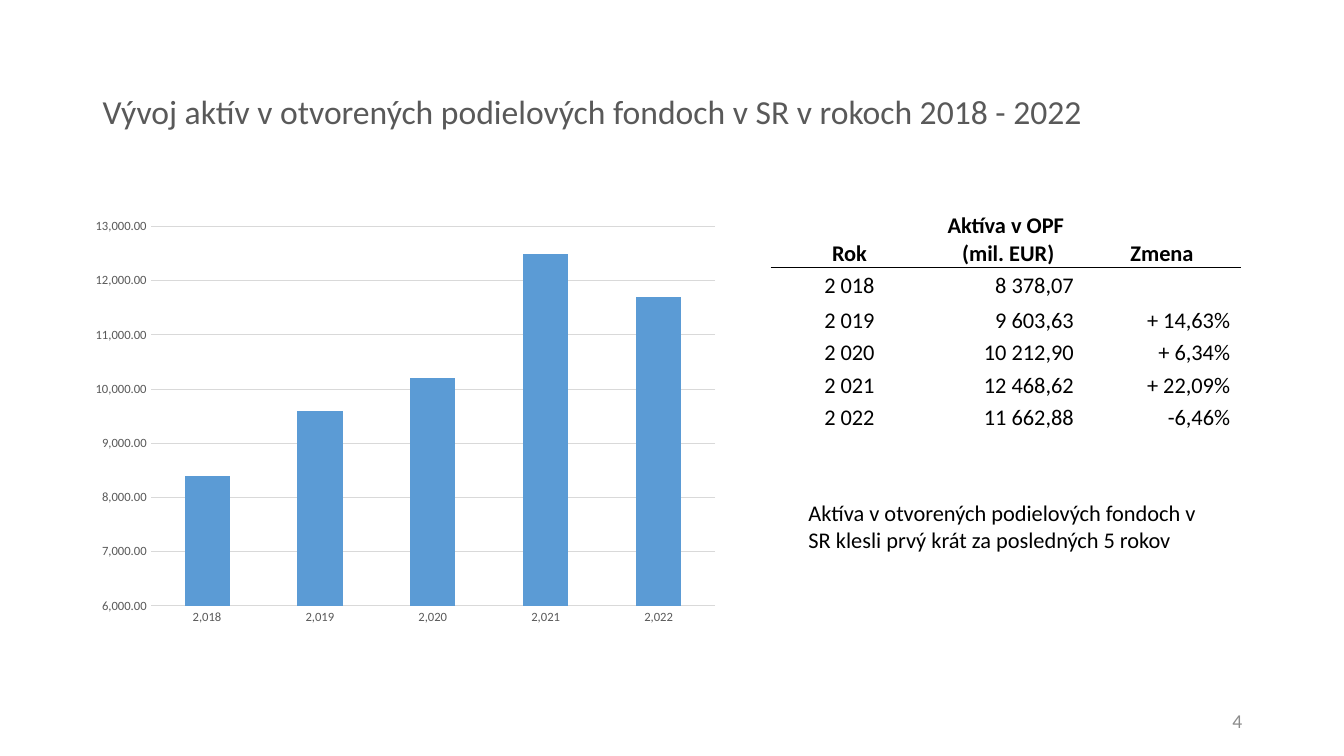
from lxml import etree
from pptx import Presentation
from pptx.chart.data import CategoryChartData
from pptx.dml.color import RGBColor
from pptx.enum.chart import XL_CHART_TYPE, XL_TICK_MARK
from pptx.enum.text import MSO_ANCHOR, PP_ALIGN
from pptx.oxml import parse_xml
from pptx.oxml.ns import nsdecls
from pptx.util import Inches, Pt

# Content
TITLE = "Vývoj aktív v otvorených podielových fondoch v SR v rokoch 2018 - 2022"
NOTE = "Aktíva v otvorených podielových fondoch v SR klesli prvý krát za posledných 5 rokov"
PAGE_NUMBER = "4"
YEARS = [2018, 2019, 2020, 2021, 2022]
ASSETS = [8400, 9600, 10200, 12500, 11700]
TABLE_ROWS = [
    ("Rok", "Aktíva v OPF\n (mil. EUR)", "Zmena"),
    ("2 018", "8 378,07", ""),
    ("2 019", "9 603,63", "+ 14,63%"),
    ("2 020", "10 212,90", "+ 6,34%"),
    ("2 021", "12 468,62", "+ 22,09%"),
    ("2 022", "11 662,88", "-6,46%"),
]
ROW_HEIGHTS = [0.64, 0.32, 0.35, 0.32, 0.32, 0.32]
COLUMN_WIDTH = 1.55

# Style
FONT = "Calibri"
BLACK = RGBColor(0x00, 0x00, 0x00)
DARK_GREY = RGBColor(0x59, 0x59, 0x59)
PAGE_GREY = RGBColor(0x8C, 0x8C, 0x8C)
GRID_GREY = RGBColor(0xD9, 0xD9, 0xD9)
BAR_BLUE = RGBColor(0x5B, 0x9B, 0xD5)
LEFT, CENTER, RIGHT = PP_ALIGN.LEFT, PP_ALIGN.CENTER, PP_ALIGN.RIGHT
TOP, MIDDLE, BOTTOM = MSO_ANCHOR.TOP, MSO_ANCHOR.MIDDLE, MSO_ANCHOR.BOTTOM
COLUMNS = XL_CHART_TYPE.COLUMN_CLUSTERED
NO_TICKS = XL_TICK_MARK.NONE


def set_font(font, size, color, bold=False):
    font.name = FONT
    font.size = Pt(size)
    font.bold = bold
    font.color.rgb = color


def write(frame, text, size, color, align=LEFT, bold=False):
    for index, line in enumerate(text.split("\n")):
        para = frame.add_paragraph() if index else frame.paragraphs[0]
        para.alignment = align
        if line:
            span = para.add_run()
            span.text = line
            set_font(span.font, size, color, bold)
        else:
            set_font(para.font, size, color, bold)


def add_text(page, place, text, size, color, align=LEFT, anchor=TOP):
    box = page.shapes.add_textbox(*map(Inches, place))
    frame = box.text_frame
    frame.word_wrap = True
    frame.vertical_anchor = anchor
    write(frame, text, size, color, align)
    return frame


def add_border(cell, side):
    line = parse_xml(f'<a:{side} {nsdecls("a")} w="{Pt(0.5)}"/>')
    fill = etree.SubElement(line, line.tag.replace(side, "solidFill"))
    etree.SubElement(fill, line.tag.replace(side, "srgbClr"), val=str(BLACK))
    cell._tc.get_or_add_tcPr().insert(0, line)


def add_asset_chart(page):
    data = CategoryChartData(number_format="#,##0.00")
    data.categories = YEARS
    data.categories.number_format = "#,##0"
    data.add_series("Series 1", ASSETS)
    place = map(Inches, (0.82, 2.09, 6.4, 4.19))
    chart = page.shapes.add_chart(COLUMNS, *place, data).chart
    chart.has_legend = False
    chart.has_title = False
    set_font(chart.font, 10, BLACK)

    plot = chart.plots[0]
    plot.gap_width = 150
    plot.vary_by_categories = False
    bars = plot.series[0].format.fill
    bars.solid()
    bars.fore_color.rgb = BAR_BLUE

    formats = ((chart.category_axis, "#,##0"), (chart.value_axis, "#,##0.00"))
    for axis, number_format in formats:
        axis.major_tick_mark = axis.minor_tick_mark = NO_TICKS
        axis.format.line.fill.background()
        axis.tick_labels.number_format = number_format
        axis.tick_labels.number_format_is_linked = False
        set_font(axis.tick_labels.font, 9, DARK_GREY)
    chart.value_axis.minimum_scale = 6000
    chart.value_axis.maximum_scale = 13000
    chart.value_axis.major_unit = 1000
    grid = chart.value_axis.major_gridlines.format.line
    grid.color.rgb = GRID_GREY
    grid.width = Pt(0.75)


def add_asset_table(page):
    column_count = len(TABLE_ROWS[0])
    place = map(Inches, (7.65, 2.01, COLUMN_WIDTH * column_count, sum(ROW_HEIGHTS)))
    table = page.shapes.add_table(len(TABLE_ROWS), column_count, *place).table
    table.first_row = table.horz_banding = False
    for column in table.columns:
        column.width = Inches(COLUMN_WIDTH)
    for row_index, texts in enumerate(TABLE_ROWS):
        table.rows[row_index].height = Inches(ROW_HEIGHTS[row_index])
        header = row_index == 0
        for column_index, text in enumerate(texts):
            cell = table.cell(row_index, column_index)
            numeric = not header and column_index > 0
            cell.margin_left = cell.margin_top = cell.margin_bottom = 0
            cell.margin_right = Inches(0.1 if numeric else 0)
            cell.vertical_anchor = BOTTOM
            cell.fill.background()
            write(cell.text_frame, text, 16, BLACK, RIGHT if numeric else CENTER, header)
            if row_index < 2:
                add_border(cell, "lnB" if header else "lnT")


def main():
    deck = Presentation()
    deck.slide_width, deck.slide_height = Inches(13.33), Inches(7.5)
    page = deck.slides.add_slide(deck.slide_layouts[6])

    # Title, chart, table, remark and page number
    title = add_text(page, (0.92, 0.4, 11.94, 1.45), TITLE, 24, DARK_GREY, anchor=MIDDLE)
    title.paragraphs[0].line_spacing = 0.9
    add_asset_chart(page)
    add_asset_table(page)
    add_text(page, (7.92, 4.9, 4.11, 0.64), NOTE, 16, BLACK)
    add_text(page, (9.42, 6.95, 3, 0.4), PAGE_NUMBER, 14, PAGE_GREY, RIGHT, MIDDLE)
    deck.save("out.pptx")


if __name__ == "__main__":
    main()
